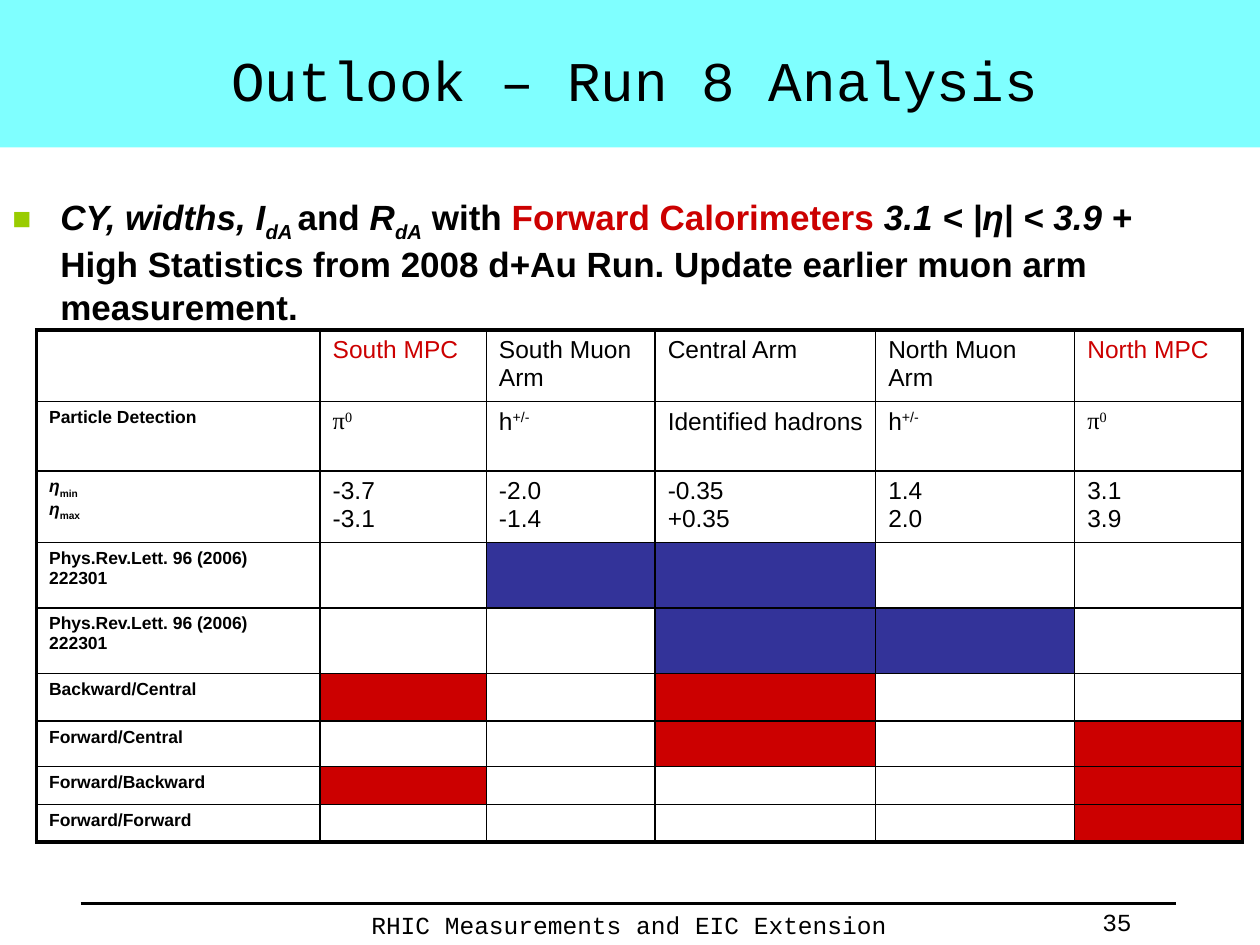
from lxml import etree
from pptx import Presentation
from pptx import util as u
from pptx.dml.color import RGBColor
from pptx.enum import shapes, text
from pptx.oxml import ns

THEME = {
    "ink": "000000", "red": "CC0000", "blue": "333399", "band": "00FFFF", "mark": "99CC00",
    "sans": "Arial", "mono": "Courier New", "serif": "Times New Roman",
    "head": 32, "lead": 20, "cell": 14, "label": 10, "foot": 14,
    "thin": 1, "thick": 2.25, "rule": 1.5,
}
SUB, SUP = -25, 30
BOLD = {"bold": True}
SLANT = {"bold": True, "italic": True}
RED = {"color": "red"}
PI = [("π", {"name": "serif"}), ("0", {"name": "serif", "base": SUP})]
HADRON = [("h", {}), ("+/-", {"base": SUP})]

TITLE = "Outlook – Run 8 Analysis"
FOOT = "RHIC Measurements and EIC Extension"
PAGE = "35"
LEAD = [
    ("CY, widths, I", SLANT), ("dA ", {**SLANT, "base": SUB}), ("and ", BOLD),
    ("R", SLANT), ("dA", {**SLANT, "base": SUB}), (" with ", BOLD),
    ("Forward Calorimeters ", {**BOLD, **RED}), ("3.1 < |η| < 3.9 ", SLANT),
    ("+ High Statistics from 2008 d+Au Run. Update earlier muon arm measurement.", BOLD),
]
ARMS = [[("South MPC", RED)], "South Muon Arm", "Central Arm", "North Muon Arm",
        [("North MPC", RED)]]
FINDS = [PI, HADRON, "Identified hadrons", HADRON, PI]
SPANS = ["-3.7\n-3.1", "-2.0\n-1.4", "-0.35\n+0.35", "1.4\n2.0", "3.1\n3.9"]
ETA = [("η", SLANT), ("min\n", {**BOLD, "base": SUB}),
       ("η", SLANT), ("max", {**BOLD, "base": SUB})]
PAPER = "Phys.Rev.Lett. 96 (2006) 222301"
ROWS = [
    ("", ARMS, None, ()),
    ("Particle Detection", FINDS, None, ()),
    (ETA, SPANS, None, ()),
    (PAPER, [], "blue", (2, 3)),
    (PAPER, [], "blue", (3, 4)),
    ("Backward/Central", [], "red", (1, 3)),
    ("Forward/Central", [], "red", (3, 5)),
    ("Forward/Backward", [], "red", (1, 5)),
    ("Forward/Forward", [], "red", (5,)),
]
WIDTHS = [2.25, 1.32, 1.34, 1.75, 1.58, 1.33]
HEIGHTS = [0.5, 0.55, 0.4, 0.52, 0.52, 0.38, 0.36, 0.3, 0.3]


def rgb(key):
    return RGBColor.from_string(THEME[key])


def box(*at):
    return [u.Inches(v) for v in at]


def put(shape, at):
    for key, val in zip(("left", "top", "width", "height"), box(*at)):
        setattr(shape, key, val)


def node(root, tag, **attrs):
    return etree.SubElement(root, ns.qn(tag), attrs)


def style(run, size, name="sans", color="ink", base=0, **more):
    form = {"size": u.Pt(THEME[size]), "name": THEME[name], **more}
    for key, val in form.items():
        setattr(run.font, key, val)
    run.font.color.rgb = rgb(color)
    if base:
        run._r.get_or_add_rPr().set("baseline", str(base * 1000))


def write(para, runs, size, **plain):
    if isinstance(runs, str):
        runs = [(runs, {})]
    for words, form in runs:
        for n, line in enumerate(words.split("\n")):
            if n:
                para.add_line_break()
            if line:
                run = para.add_run()
                run.text = line
                style(run, size, **{**plain, **form})


def label(slide, at, runs, size, align=text.PP_ALIGN.LEFT, **plain):
    area = slide.shapes.add_textbox(*box(*at))
    area.text_frame.word_wrap = True
    para = area.text_frame.paragraphs[0]
    para.alignment = align
    write(para, runs, size, **plain)
    return para


def bullet(para):
    pr = para._p.get_or_add_pPr()
    pr.set("marL", str(u.Inches(0.38)))
    pr.set("indent", str(-u.Inches(0.38)))
    node(node(pr, "a:buClr"), "a:srgbClr", val=THEME["mark"])
    node(pr, "a:buSzPct", val="90000")
    node(pr, "a:buFont", typeface=THEME["sans"])
    node(pr, "a:buChar", char="■")


def border(cell, edges):
    pr = cell._tc.get_or_add_tcPr()
    for n, (side, outer) in enumerate(edges):
        wide = u.Pt(THEME["thick" if outer else "thin"])
        line = etree.Element(ns.qn("a:ln" + side), w=str(wide))
        node(node(line, "a:solidFill"), "a:srgbClr", val=THEME["ink"])
        pr.insert(n, line)


def grid(slide):
    rows, cols = len(HEIGHTS), len(WIDTHS)
    frame = slide.shapes.add_table(rows, cols, *box(0.29, 2.62, 9.58, 4.13))
    table = frame.table
    table.first_row = table.horz_banding = False
    for col, wide in zip(table.columns, WIDTHS):
        col.width = u.Inches(wide)
    for row, high in zip(table.rows, HEIGHTS):
        row.height = u.Inches(high)
    for r, (name, vals, tint, marks) in enumerate(ROWS):
        for c in range(cols):
            cell = table.cell(r, c)
            if c in marks:
                cell.fill.solid()
                cell.fill.fore_color.rgb = rgb(tint)
            else:
                cell.fill.background()
            border(cell, [("L", c == 0), ("R", c == cols - 1),
                          ("T", r == 0), ("B", r == rows - 1)])
            para = cell.text_frame.paragraphs[0]
            if c == 0:
                write(para, name, "label", bold=True)
            elif vals:
                write(para, vals[c - 1], "cell")
            if not para.runs:
                node(para._p, "a:endParaRPr", sz=str(THEME["label"] * 100))
    put(frame, (0.29, 2.62, 9.58, 4.13))


def main():
    deck = Presentation()
    deck.slide_width, deck.slide_height = box(10, 7.5)
    slide = deck.slides.add_slide(deck.slide_layouts[5])

    band = slide.shapes.add_shape(shapes.MSO_SHAPE.RECTANGLE, *box(0, 0, 10, 1.17))
    band.shadow.inherit = False
    band.fill.solid()
    band.fill.fore_color.rgb = rgb("band")
    band.line.fill.background()
    tint = band._element.spPr.find(".//" + ns.qn("a:srgbClr"))
    node(tint, "a:alpha", val="50000")
    slide.shapes._spTree.insert(2, band._element)

    title = slide.shapes.title
    put(title, (-0.17, 0.04, 10.42, 1.17))
    title.text_frame.vertical_anchor = text.MSO_ANCHOR.MIDDLE
    para = title.text_frame.paragraphs[0]
    para.alignment = text.PP_ALIGN.CENTER
    write(para, TITLE, "head", name="mono")

    rule = slide.shapes.add_connector(shapes.MSO_CONNECTOR.STRAIGHT,
                                      *box(0.64, 7.17, 9.33, 7.17))
    rule.line.color.rgb = rgb("ink")
    rule.line.width = u.Pt(THEME["rule"])
    node(rule._element.spPr, "a:effectLst")

    label(slide, (1.33, 7.17, 7.33, 0.52), FOOT, "foot", text.PP_ALIGN.CENTER, name="mono")
    label(slide, (8.5, 7.15, 0.58, 0.52), PAGE, "foot", text.PP_ALIGN.RIGHT, name="mono")
    grid(slide)
    bullet(label(slide, (0, 1.5, 9.58, 6.08), LEAD, "lead"))
    deck.save("out.pptx")


if __name__ == "__main__":
    main()
